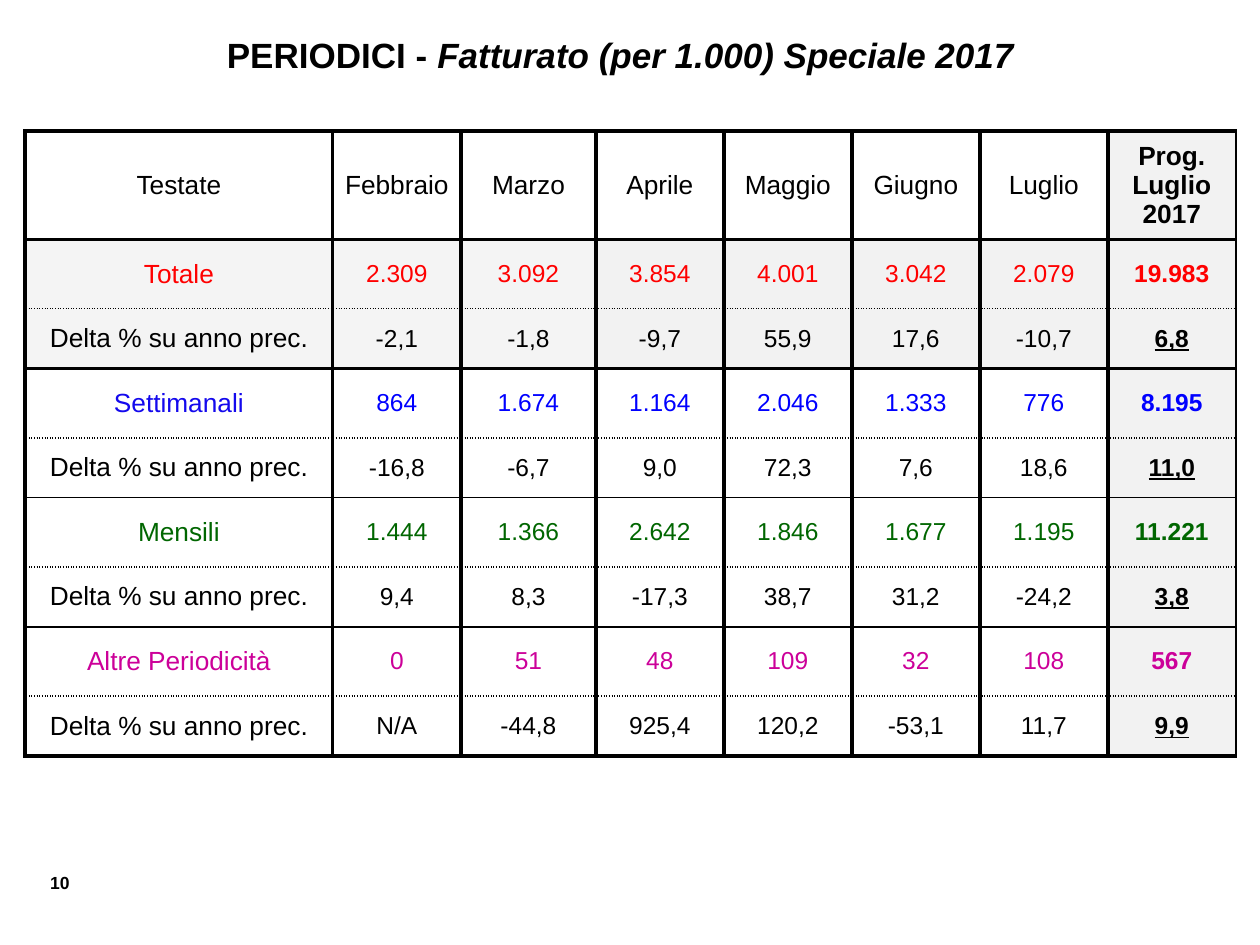
"""Build the slide on the 2017 special turnover of periodicals."""
from lxml import etree
from pptx import Presentation
from pptx.dml.color import RGBColor
from pptx.enum.text import MSO_ANCHOR, MSO_AUTO_SIZE, PP_ALIGN
from pptx.oxml.ns import qn
from pptx.util import Inches, Pt

CENTER, RIGHT = PP_ALIGN.CENTER, PP_ALIGN.RIGHT
MIDDLE = MSO_ANCHOR.MIDDLE
NO_AUTOFIT = MSO_AUTO_SIZE.NONE
FONT = "Arial"
COLORS = {
    "black": "000000", "red": "FF0000", "indigo": "1409ED", "blue": "0000FF",
    "green": "006600", "magenta": "CC0099", "grey": "F2F2F2", "pale": "F4F4F4",
}
THICK, THIN, DOTTED = (2.25, "solid"), (1, "solid"), (1, "sysDot")

HEADER = ["Testate", "Febbraio", "Marzo", "Aprile", "Maggio", "Giugno", "Luglio",
          "Prog.\vLuglio 2017"]
DELTA_LABEL = "Delta % su anno prec."
GROUPS = [
    ("Totale", "red", "red",
     ["2.309", "3.092", "3.854", "4.001", "3.042", "2.079", "19.983"],
     ["-2,1", "-1,8", "-9,7", "55,9", "17,6", "-10,7", "6,8"]),
    ("Settimanali", "indigo", "blue",
     ["864", "1.674", "1.164", "2.046", "1.333", "776", "8.195"],
     ["-16,8", "-6,7", "9,0", "72,3", "7,6", "18,6", "11,0"]),
    ("Mensili", "green", "green",
     ["1.444", "1.366", "2.642", "1.846", "1.677", "1.195", "11.221"],
     ["9,4", "8,3", "-17,3", "38,7", "31,2", "-24,2", "3,8"]),
    ("Altre Periodicità", "magenta", "magenta",
     ["0", "51", "48", "109", "32", "108", "567"],
     ["N/A", "-44,8", "925,4", "120,2", "-53,1", "11,7", "9,9"]),
]
TABLE_WIDTH, TABLE_HEIGHT = 9.61, 4.96
WIDE_COLUMNS = [2.44, 1.02, 1.07]
EVEN_COLUMNS = len(HEADER) - len(WIDE_COLUMNS)
COLUMN_WIDTHS = WIDE_COLUMNS + [
    (TABLE_WIDTH - sum(WIDE_COLUMNS)) / EVEN_COLUMNS] * EVEN_COLUMNS
HEADER_HEIGHT, TURNOVER_HEIGHT = 0.86, 0.55
DELTA_HEIGHT = (TABLE_HEIGHT - HEADER_HEIGHT) / len(GROUPS) - TURNOVER_HEIGHT
ROW_HEIGHTS = [HEADER_HEIGHT] + [TURNOVER_HEIGHT, DELTA_HEIGHT] * len(GROUPS)
ROW_RULES = [THICK, THICK, DOTTED, THICK, DOTTED, THIN, DOTTED, THIN, DOTTED, THICK]
LAST_COLUMN = len(HEADER) - 1


def rgb(color):
    """Return the named colour."""
    return RGBColor.from_string(COLORS[color])


def style_paragraph(paragraph, size, color="black", bold=False, align=CENTER):
    """Set the alignment and font of a whole paragraph."""
    paragraph.alignment = align
    font = paragraph.font
    font.name, font.size, font.bold = FONT, Pt(size), bold
    font.color.rgb = rgb(color)


def set_borders(cell, **rules):
    """Draw the cell's edges, each given as a width and a dash."""
    properties = cell._tc.get_or_add_tcPr()
    for side in "LRTB":
        width, dash = rules[side]
        line = etree.SubElement(properties, qn(f"a:ln{side}"), w=str(Pt(width)))
        solid = etree.SubElement(line, qn("a:solidFill"))
        etree.SubElement(solid, qn("a:srgbClr"), val=COLORS["black"])
        etree.SubElement(line, qn("a:prstDash"), val=dash)


def cell_fill(row, column):
    """Return the fill colour of a cell, or None."""
    if column == LAST_COLUMN:
        return "grey"
    if row in (1, 2):
        return "pale" if column < 3 else "grey"
    return None


def fill_cell(cell, row, column, text, color):
    """Write and format one cell of the turnover table."""
    is_total = column == LAST_COLUMN
    is_figure = row > 0 and column > 0
    side_margin = 0 if is_figure else 0.05 if row == 0 else 0.1
    cell.margin_left = cell.margin_right = Inches(side_margin)
    cell.margin_top = cell.margin_bottom = Inches(0 if is_figure else 0.05)
    cell.vertical_anchor = MIDDLE
    cell.text = text
    paragraph = cell.text_frame.paragraphs[0]
    style_paragraph(paragraph, 14 if is_figure else 15, color, is_total)
    if is_total and row > 0 and row % 2 == 0:
        paragraph.font.underline = True
    set_borders(cell, L=THICK, R=THIN if is_total else THICK,
                T=ROW_RULES[row], B=ROW_RULES[row + 1])
    fill = cell_fill(row, column)
    if fill:
        cell.fill.solid()
        cell.fill.fore_color.rgb = rgb(fill)
    else:
        cell.fill.background()


def table_rows():
    """Yield each row's texts with its label and figure colours."""
    yield HEADER, "black", "black"
    for label, label_color, figure_color, turnover, deltas in GROUPS:
        yield [label] + turnover, label_color, figure_color
        yield [DELTA_LABEL] + deltas, "black", "black"


def add_turnover_table(slide):
    """Add the table of monthly turnover and yearly change."""
    table = slide.shapes.add_table(
        len(ROW_HEIGHTS), len(COLUMN_WIDTHS), Inches(0.2), Inches(1.04),
        Inches(TABLE_WIDTH), Inches(TABLE_HEIGHT)).table
    table.first_row = table.horz_banding = False
    for column, width in zip(table.columns, COLUMN_WIDTHS):
        column.width = Inches(width)
    for table_row, height in zip(table.rows, ROW_HEIGHTS):
        table_row.height = Inches(height)
    for row, (texts, label_color, figure_color) in enumerate(table_rows()):
        for column, text in enumerate(texts):
            color = figure_color if column else label_color
            fill_cell(table.cell(row, column), row, column, text, color)


def set_title(slide, subject, measure):
    """Place the title, with the measure in italics."""
    title = slide.shapes.title
    title.left, title.top = Inches(0.2), Inches(0.21)
    title.width, title.height = Inches(9.45), Inches(0.44)
    frame = title.text_frame
    frame.auto_size, frame.vertical_anchor = NO_AUTOFIT, MIDDLE
    paragraph = frame.paragraphs[0]
    style_paragraph(paragraph, 20, bold=True)
    paragraph.add_run().text = subject
    measure_run = paragraph.add_run()
    measure_run.text = measure
    measure_run.font.italic = True


def add_page_number(slide, number):
    """Add the page number at the bottom left."""
    frame = slide.shapes.add_textbox(
        Inches(0.19), Inches(6.87), Inches(0.46), Inches(0.27)).text_frame
    frame.word_wrap = True
    frame.text = number
    style_paragraph(frame.paragraphs[0], 10, bold=True, align=RIGHT)


def main():
    """Build and save the slide."""
    presentation = Presentation()
    presentation.slide_width, presentation.slide_height = Inches(10), Inches(7.5)
    slide = presentation.slides.add_slide(
        presentation.slide_layouts.get_by_name("Title Only"))
    set_title(slide, "PERIODICI - ", "Fatturato (per 1.000) Speciale 2017")
    add_turnover_table(slide)
    add_page_number(slide, "10")
    presentation.save("out.pptx")


if __name__ == "__main__":
    main()
